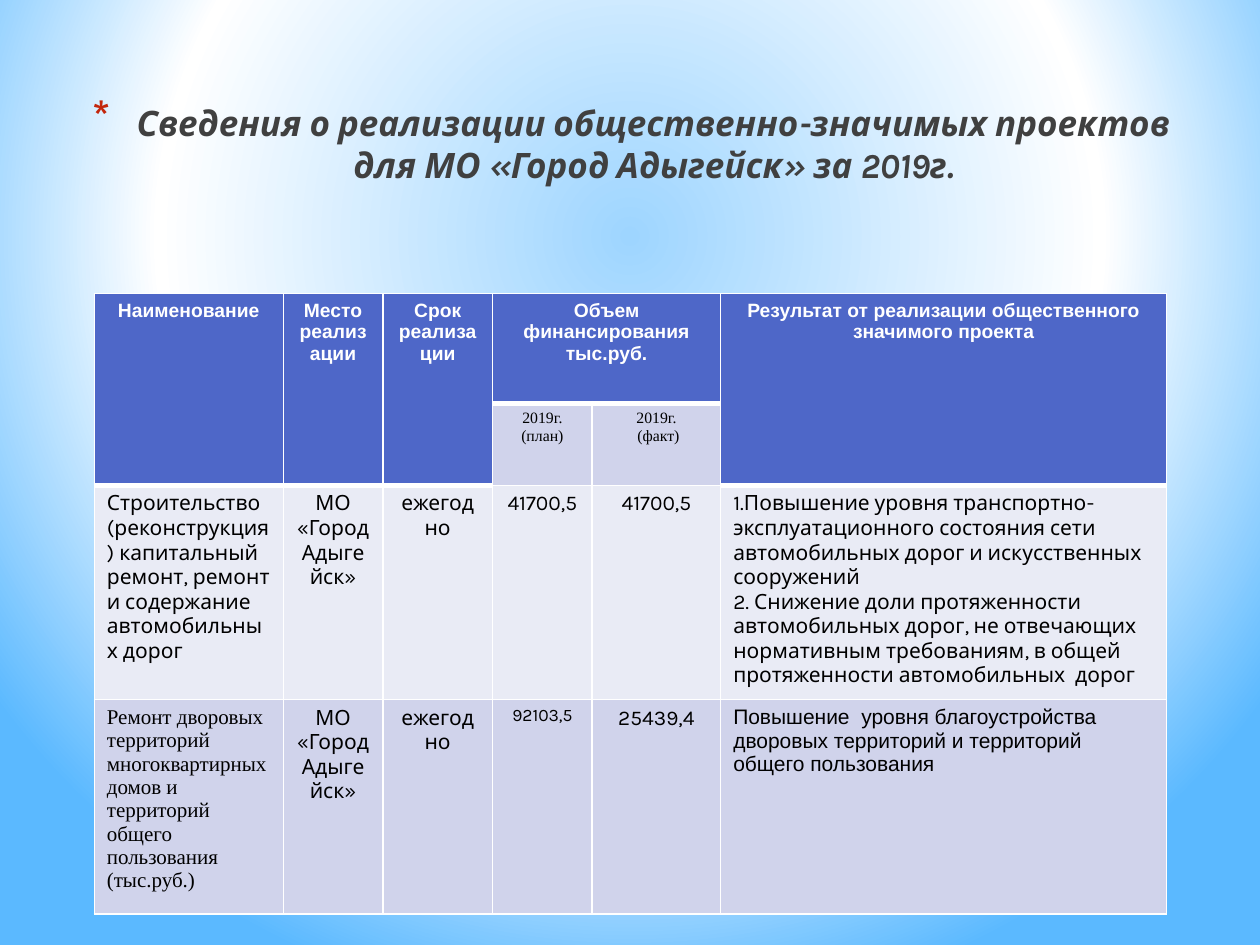
"""Build a slide with a table of public projects of the town for 2019."""
from lxml.etree import SubElement
from pptx import Presentation
from pptx.dml.color import RGBColor
from pptx.enum.text import MSO_ANCHOR, PP_ALIGN
from pptx.oxml import parse_xml
from pptx.oxml.ns import nsdecls, qn
from pptx.util import Cm, Pt

HUES = {
    "core": "9ED5FF", "white": "FFFFFF", "edge": "5BB9FF", "title": "404040",
    "star": "C3260C", "head": "4E67C8", "pale": "E9EBF5", "band": "D0D3EB",
    "black": "000000",
}
COLS = (3.81, 2.01, 2.21, 2.01, 2.59, 8.99)
ROWS = (2.21, 1.52, 4.25, 4.01)
SPANS = ((0, 0, 1, 0), (0, 1, 1, 1), (0, 2, 1, 2), (0, 3, 0, 4), (0, 5, 1, 5))
HEAD = dict(size=11, font="Arial", hue="white", bold=True)
YEAR = dict(size=9, font="Times New Roman")
LEFT = dict(align=PP_ALIGN.LEFT)
TOWN = "МО «Город Адыгейск»"
TERM = "ежегодно"
CELLS = (
    (
        ("Наименование", HEAD),
        ("Место реализации", HEAD),
        ("Срок реализации", HEAD),
        ("Объем финансирования тыс.руб.", HEAD),
        None,
        ("Результат от реализации общественного значимого проекта", HEAD),
    ),
    (None, None, None, ("2019г. (план)", YEAR), ("2019г.\n (факт)", YEAR), None),
    (
        ("Строительство (реконструкция) капитальный ремонт, ремонт "
         "и содержание автомобильных дорог", LEFT),
        (TOWN, {}),
        (TERM, {}),
        ("41700,5", {}),
        ("41700,5", {}),
        ("1.Повышение уровня транспортно-эксплуатационного состояния сети "
         "автомобильных дорог и искусственных сооружений\n"
         "2. Снижение доли протяженности автомобильных дорог, не отвечающих "
         "нормативным требованиям, в общей протяженности автомобильных  дорог", LEFT),
    ),
    (
        ("Ремонт дворовых территорий многоквартирных домов и территорий "
         "общего пользования (тыс.руб.)", dict(LEFT, font="Times New Roman")),
        (TOWN, {}),
        (TERM, {}),
        ("92103,5", dict(size=10)),
        ("25439,4", {}),
        ("Повышение  уровня благоустройства дворовых территорий и территорий "
         "общего пользования", dict(LEFT, font="Arial")),
    ),
)


def write(frame, text, size=12, font="Karla", hue="black", bold=False,
          slant=False, align=PP_ALIGN.CENTER):
    """Put each line of text into the frame as a styled paragraph."""
    frame.word_wrap = True
    for num, line in enumerate(text.split("\n")):
        para = frame.add_paragraph() if num else frame.paragraphs[0]
        para.alignment = align
        run = para.add_run()
        run.text = line
        face = run.font
        face.name, face.size = font, Pt(size)
        face.bold, face.italic = bold, slant
        face.color.rgb = RGBColor.from_string(HUES[hue])


def paint(slide):
    """Fill the background with a radial gradient."""
    stops = "".join(
        f'<a:gs pos="{pos}000"><a:srgbClr val="{HUES[hue]}"/></a:gs>'
        for pos, hue in ((0, "core"), (60, "white"), (100, "edge")))
    back = parse_xml(
        f'<p:bg {nsdecls("p", "a")}><p:bgPr><a:gradFill rotWithShape="1">'
        f'<a:gsLst>{stops}</a:gsLst><a:path path="circle">'
        '<a:fillToRect l="20000" t="10000" r="20000" b="60000"/></a:path>'
        '</a:gradFill><a:effectLst/></p:bgPr></p:bg>')
    slide.element.find(qn("p:cSld")).insert(0, back)


def star(para):
    """Give the paragraph a hanging star bullet."""
    props = para._p.get_or_add_pPr()
    props.set("marL", str(Cm(0.89)))
    props.set("indent", str(Cm(-0.89)))
    tint = SubElement(props, qn("a:buClr"))
    SubElement(tint, qn("a:srgbClr"), val=HUES["star"])
    SubElement(props, qn("a:buSzPct"), val="128000")
    SubElement(props, qn("a:buChar"), char="*")


def title(slide, text):
    """Add the slide title."""
    box = slide.shapes.add_textbox(Cm(1.3), Cm(1.93), Cm(22.86), Cm(5.61))
    frame = box.text_frame
    frame.vertical_anchor = MSO_ANCHOR.TOP
    write(frame, text, size=20, hue="title", bold=True, slant=True)
    star(frame.paragraphs[0])


def edge(cell, base):
    """Draw white lines round a cell, with the given width at its base."""
    props = cell._tc.get_or_add_tcPr()
    for num, (side, width) in enumerate(zip("LRTB", (1, 1, 1, base))):
        props.insert(num, parse_xml(
            f'<a:ln{side} {nsdecls("a")} w="{Pt(width)}"><a:solidFill>'
            f'<a:srgbClr val="{HUES["white"]}"/></a:solidFill></a:ln{side}>'))


def shade(row, col):
    """Name the fill of a cell."""
    if row == 0 or row == 1 and col not in (3, 4):
        return "head"
    return "pale" if row == 2 else "band"


def table(slide):
    """Add the table of projects."""
    grid = slide.shapes.add_table(
        len(ROWS), len(COLS), Cm(1.9), Cm(5.92), Cm(sum(COLS)), Cm(sum(ROWS))).table
    grid.first_row = grid.horz_banding = False
    for col, width in zip(grid.columns, COLS):
        col.width = Cm(width)
    for row, height in zip(grid.rows, ROWS):
        row.height = Cm(height)
    for top, left, low, right in SPANS:
        grid.cell(top, left).merge(grid.cell(low, right))
    for row, items in enumerate(CELLS):
        for col, item in enumerate(items):
            cell = grid.cell(row, col)
            cell.fill.solid()
            cell.fill.fore_color.rgb = RGBColor.from_string(HUES[shade(row, col)])
            edge(cell, 1 if row else 3)
            if item:
                text, form = item
                write(cell.text_frame, text, **form)


def main():
    """Build and save the slide."""
    deck = Presentation()
    deck.slide_width, deck.slide_height = Cm(25.4), Cm(19.05)
    slide = deck.slides.add_slide(deck.slide_layouts[6])
    paint(slide)
    title(slide, "Сведения о реализации общественно-значимых проектов "
                 "для МО «Город Адыгейск» за 2019г.")
    table(slide)
    deck.save("out.pptx")


if __name__ == "__main__":
    main()
